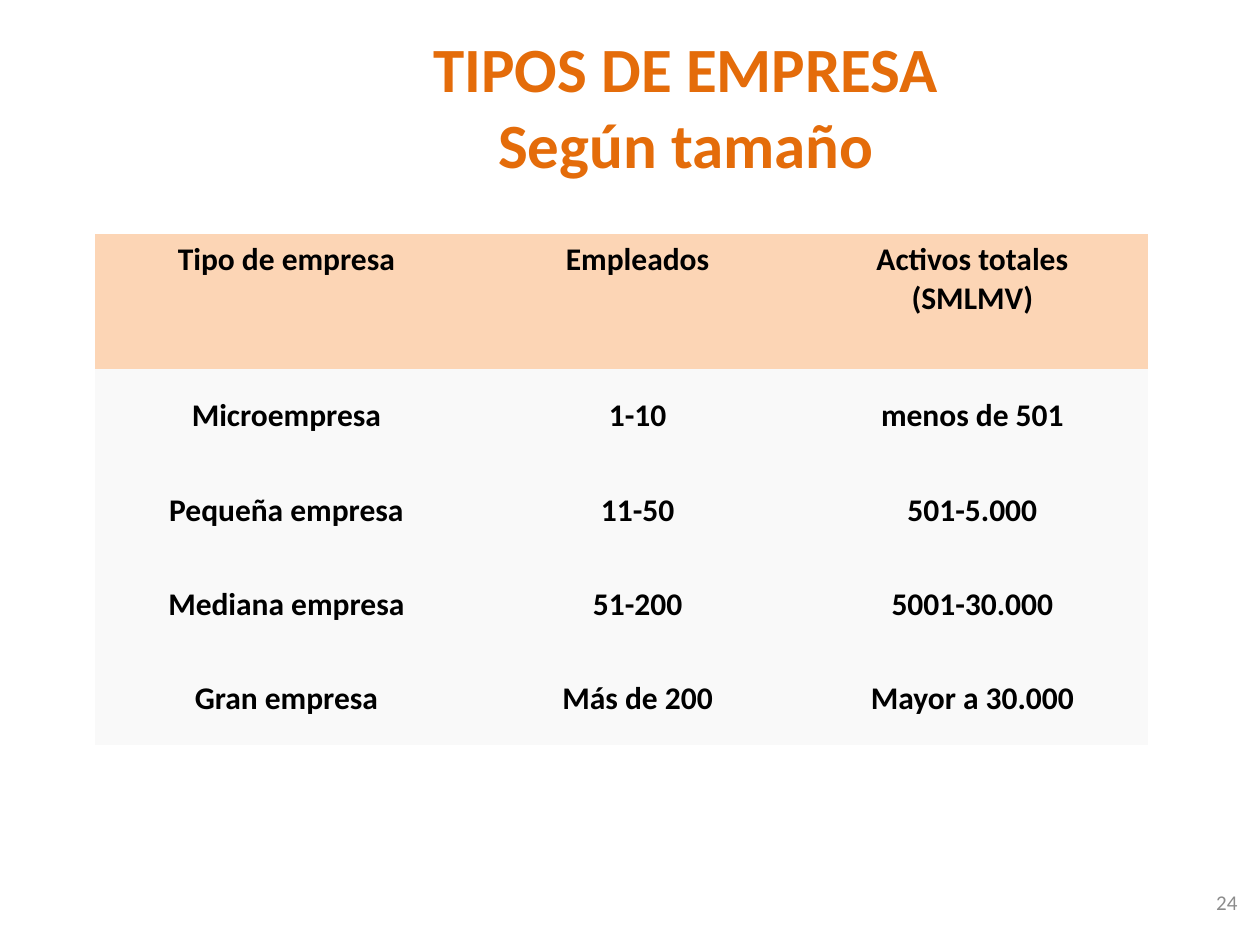
import copy
from dataclasses import dataclass

import pptx
import pptx.dml.color
import pptx.enum.text
import pptx.oxml
import pptx.oxml.ns
import pptx.util

Pt = pptx.util.Pt
Align = pptx.enum.text.PP_ALIGN
Anchor = pptx.enum.text.MSO_ANCHOR


@dataclass
class Theme:
    font: str = "Calibri"
    title_color: str = "E46C0A"
    text_color: str = "000000"
    number_color: str = "8C8C8C"
    header_fill: str = "FCD5B5"
    body_fill: str = "F9F9F9"
    title_size: int = 36
    table_size: int = 18
    number_size: int = 12


theme = Theme()


def format_text(text_frame, size, color, bold, align):
    for para in text_frame.paragraphs:
        para.alignment = align
        for span in para.runs:
            span.font.name = theme.font
            span.font.size = Pt(size)
            span.font.bold = bold
            span.font.color.rgb = pptx.dml.color.RGBColor.from_string(color)
        # Line breaks take the format of the text around them
        for line_break in para._p.findall(pptx.oxml.ns.qn("a:br")):
            line_break.append(copy.deepcopy(para.runs[0]._r.rPr))


def remove_borders(cell):
    properties = cell._tc.get_or_add_tcPr()
    for position, side in enumerate(("lnL", "lnR", "lnT", "lnB")):
        border = pptx.oxml.parse_xml(
            f'<a:{side} {pptx.oxml.ns.nsdecls("a")} w="0"><a:noFill/></a:{side}>')
        properties.insert(position, border)


deck = pptx.Presentation()
deck.slide_width, deck.slide_height = Pt(720), Pt(540)
page = deck.slides.add_slide(deck.slide_layouts[5])

# Title
title = page.shapes.title
title.left, title.top, title.width, title.height = Pt(144.7), Pt(31.7), Pt(494.6), Pt(56.9)
title.text_frame.text = "TIPOS DE EMPRESA\vSegún tamaño"
title.text_frame.auto_size = pptx.enum.text.MSO_AUTO_SIZE.NONE
title.text_frame.vertical_anchor = Anchor.MIDDLE
format_text(title.text_frame, theme.title_size, theme.title_color, True, Align.CENTER)

# Page number
number = page.shapes.add_textbox(Pt(678.2), Pt(496.8), Pt(36), Pt(37.4))
number.text_frame.word_wrap = True
number.text_frame.text = "24"
number.text_frame.vertical_anchor = Anchor.MIDDLE
format_text(number.text_frame, theme.number_size, theme.number_color, False, Align.RIGHT)

# Table of company types
rows = [
    ("Tipo de empresa", "Empleados", "Activos totales\v(SMLMV)"),
    ("Microempresa", "1-10", "menos de 501"),
    ("Pequeña empresa", "11-50", "501-5.000"),
    ("Mediana empresa", "51-200", "5001-30.000"),
    ("Gran empresa", "Más de 200", "Mayor a 30.000"),
]
column_widths = (219.4, 182, 200.6)
header_height, body_height = 77, 53.8
table = page.shapes.add_table(
    len(rows), len(column_widths), Pt(54), Pt(133.9), Pt(sum(column_widths)),
    Pt(header_height + body_height * (len(rows) - 1))).table
table.horz_banding = False

for column, width in zip(table.columns, column_widths):
    column.width = Pt(width)

for row_index, texts in enumerate(rows):
    is_header = row_index == 0
    table.rows[row_index].height = Pt(header_height if is_header else body_height)
    fill = theme.header_fill if is_header else theme.body_fill
    for column_index, text in enumerate(texts):
        cell = table.cell(row_index, column_index)
        cell.text_frame.text = text
        cell.vertical_anchor = Anchor.TOP if is_header else Anchor.MIDDLE
        cell.fill.solid()
        cell.fill.fore_color.rgb = pptx.dml.color.RGBColor.from_string(fill)
        remove_borders(cell)
        format_text(cell.text_frame, theme.table_size, theme.text_color, True, Align.CENTER)

deck.save("out.pptx")
